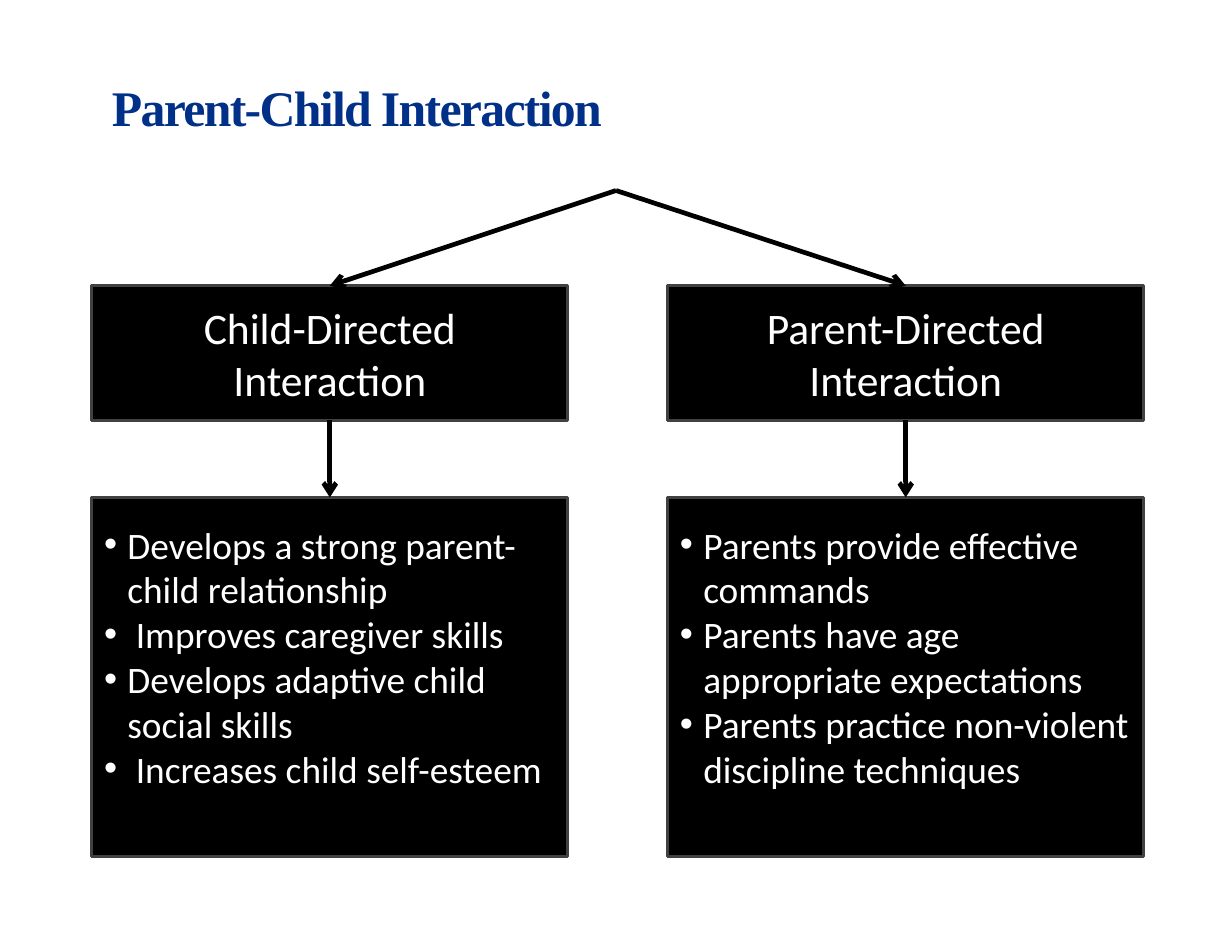
from dataclasses import dataclass

from lxml import etree
from pptx import Presentation
from pptx.dml.color import RGBColor
from pptx.enum.shapes import MSO_CONNECTOR, MSO_SHAPE
from pptx.enum.text import MSO_ANCHOR, PP_ALIGN
from pptx.oxml.ns import qn
from pptx.util import Cm, Pt

RECTANGLE = MSO_SHAPE.RECTANGLE
STRAIGHT = MSO_CONNECTOR.STRAIGHT
MIDDLE, BOTTOM = MSO_ANCHOR.MIDDLE, MSO_ANCHOR.BOTTOM
CENTER, LEFT = PP_ALIGN.CENTER, PP_ALIGN.LEFT


@dataclass(frozen=True)
class Theme:
    title_color = RGBColor(0x00, 0x30, 0x87)
    box_fill = RGBColor(0x00, 0x00, 0x00)
    box_line = RGBColor(0x41, 0x41, 0x41)
    box_text = RGBColor(0xFF, 0xFF, 0xFF)
    arrow = RGBColor(0x00, 0x00, 0x00)
    title_font = "Times New Roman"
    body_font = "Calibri"
    title_size = Pt(32)
    heading_size = Pt(28)
    bullet_size = Pt(24)


theme = Theme()

BOX_WIDTH = 10.8
HEADING_TOP, HEADING_HEIGHT = 6.48, 3.05
DETAIL_TOP, DETAIL_HEIGHT = 11.28, 8.15
APEX = (13.97, 4.32)
COLUMNS = [
    (2.08, "Child-Directed Interaction", [
        "Develops a strong parent-child relationship",
        " Improves caregiver skills",
        "Develops adaptive child social skills",
        " Increases child self-esteem",
    ]),
    (15.14, "Parent-Directed Interaction", [
        "Parents provide effective commands",
        "Parents have age appropriate expectations",
        "Parents practice non-violent discipline techniques",
    ]),
]

presentation = Presentation()
presentation.slide_width = Cm(27.94)
presentation.slide_height = Cm(21.59)
slide = presentation.slides.add_slide(presentation.slide_layouts[6])


def add_box(left, top, height, lines, size, bulleted=False):
    shape = slide.shapes.add_shape(
        RECTANGLE, Cm(left), Cm(top), Cm(BOX_WIDTH), Cm(height))
    shape.shadow.inherit = False
    shape.fill.solid()
    shape.fill.fore_color.rgb = theme.box_fill
    shape.line.color.rgb = theme.box_line
    shape.line.width = Pt(2)
    frame = shape.text_frame
    frame.word_wrap = True
    frame.vertical_anchor = MIDDLE
    frame.margin_left = frame.margin_right = Cm(0.28)
    frame.margin_top = Cm(0.15)
    frame.margin_bottom = Cm(1.1 if bulleted else 0.15)
    for index, line in enumerate(lines):
        paragraph = frame.add_paragraph() if index else frame.paragraphs[0]
        paragraph.alignment = LEFT if bulleted else CENTER
        if bulleted:
            properties = paragraph._p.get_or_add_pPr()
            properties.set("marL", str(Cm(0.53)))
            properties.set("indent", str(-Cm(0.53)))
            etree.SubElement(properties, qn("a:buFont"), typeface="Arial")
            etree.SubElement(properties, qn("a:buChar"), char="•")
        run = paragraph.add_run()
        run.text = line
        run.font.name = theme.body_font
        run.font.size = size
        run.font.color.rgb = theme.box_text


def add_arrow(start, end):
    connector = slide.shapes.add_connector(
        STRAIGHT, *(Cm(value) for value in (*start, *end)))
    connector.line.color.rgb = theme.arrow
    connector.line.width = Pt(3)
    properties = connector._element.spPr
    etree.SubElement(properties.find(qn("a:ln")), qn("a:tailEnd"), type="arrow")
    etree.SubElement(properties, qn("a:effectLst"))


title = slide.shapes.add_textbox(Cm(2.54), Cm(-0.03), Cm(20.32), Cm(3.12))
title_frame = title.text_frame
title_frame.word_wrap = True
title_frame.vertical_anchor = BOTTOM
title_frame.margin_left = title_frame.margin_top = title_frame.margin_bottom = 0
title_frame.margin_right = Cm(0.28)
title_run = title_frame.paragraphs[0].add_run()
title_run.text = "Parent-Child Interaction"
title_run.font.name = theme.title_font
title_run.font.size = theme.title_size
title_run.font.bold = True
title_run.font.color.rgb = theme.title_color
title_run._r.get_or_add_rPr().set("spc", "-110")

for left, heading, details in COLUMNS:
    center = left + BOX_WIDTH / 2
    add_box(left, HEADING_TOP, HEADING_HEIGHT, [heading], theme.heading_size)
    add_box(left, DETAIL_TOP, DETAIL_HEIGHT, details, theme.bullet_size,
            bulleted=True)
    add_arrow(APEX, (center, HEADING_TOP))
    add_arrow((center, HEADING_TOP + HEADING_HEIGHT), (center, DETAIL_TOP))

presentation.save("out.pptx")
